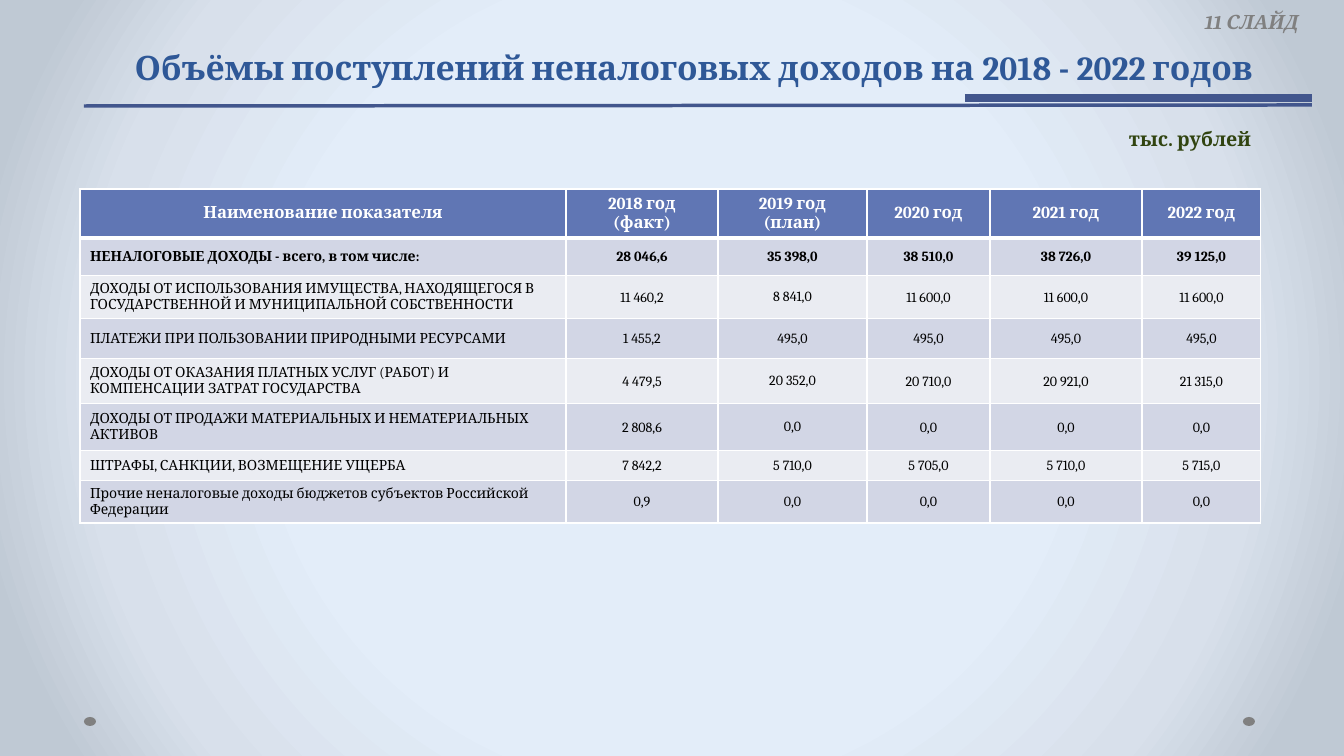
"""Build the slide on non-tax revenue volumes for 2018 - 2022."""
from dataclasses import dataclass

from pptx import Presentation, oxml, util as u
from pptx.dml.color import RGBColor
from pptx.enum import shapes, text
from pptx.oxml import ns

EMU_PER_PX = 914400 / 100.8
FONT = "Cambria"
COLOURS = {
    "title": "2F5897", "unit": "314410", "grey": "808080", "rule": "42568D",
    "header": "6076B4", "odd": "D2D6E5", "even": "EAECF2",
    "white": "FFFFFF", "black": "000000",
}
BACKGROUND_STOPS = {50: "E3EDF9", 76: "D8E0EB", 92: "BFC9D4"}
ALIGN = text.PP_ALIGN
ANCHOR = text.MSO_ANCHOR

TABLE_LEFT, TABLE_TOP = 80, 189
COLUMN_WIDTHS = [486, 152, 149, 123, 152, 119]
ROW_HEIGHTS = [48, 38, 43, 40, 45, 47, 30, 42]
PLAN_COLUMN = 2
ROWS = [
    ["Наименование показателя", "2018 год\v(факт)", "2019 год\v(план)",
     "2020 год", "2021 год", "2022 год"],
    ["НЕНАЛОГОВЫЕ ДОХОДЫ - всего, в том числе:",
     "28 046,6", "35 398,0", "38 510,0", "38 726,0", "39 125,0"],
    ["ДОХОДЫ ОТ ИСПОЛЬЗОВАНИЯ ИМУЩЕСТВА, НАХОДЯЩЕГОСЯ В "
     "ГОСУДАРСТВЕННОЙ И МУНИЦИПАЛЬНОЙ СОБСТВЕННОСТИ",
     "11 460,2", "8 841,0", "11 600,0", "11 600,0", "11 600,0"],
    ["ПЛАТЕЖИ ПРИ ПОЛЬЗОВАНИИ ПРИРОДНЫМИ РЕСУРСАМИ",
     "1 455,2", "495,0", "495,0", "495,0", "495,0"],
    ["ДОХОДЫ ОТ ОКАЗАНИЯ ПЛАТНЫХ УСЛУГ (РАБОТ) И КОМПЕНСАЦИИ ЗАТРАТ ГОСУДАРСТВА",
     "4 479,5", "20 352,0", "20 710,0", "20 921,0", "21 315,0"],
    ["ДОХОДЫ ОТ ПРОДАЖИ МАТЕРИАЛЬНЫХ И НЕМАТЕРИАЛЬНЫХ АКТИВОВ",
     "2 808,6", "0,0", "0,0", "0,0", "0,0"],
    ["ШТРАФЫ, САНКЦИИ, ВОЗМЕЩЕНИЕ УЩЕРБА",
     "7 842,2", "5 710,0", "5 705,0", "5 710,0", "5 715,0"],
    ["Прочие неналоговые доходы бюджетов субъектов Российской Федерации",
     "0,9", "0,0", "0,0", "0,0", "0,0"],
]


@dataclass
class Label:
    words: str
    left: int
    top: int
    width: int
    height: int
    size: int
    colour: str
    align: ALIGN
    anchor: ANCHOR = ANCHOR.TOP
    italic: bool = False


@dataclass
class Rule:
    start: tuple[int, int]
    end: tuple[int, int]
    weight: float


@dataclass
class Dot:
    left: int
    top: int = 717
    width: int = 12
    height: int = 9


LABELS = [
    Label("Объёмы поступлений неналоговых доходов на 2018 - 2022 годов",
          84, 30, 1220, 62, 24, "title", ALIGN.CENTER, ANCHOR.BOTTOM),
    Label("тыс. рублей", 1089, 122, 172, 34, 14, "unit", ALIGN.RIGHT),
    Label("11 СЛАЙД", 1195, 5, 123, 34, 14, "grey", ALIGN.LEFT, italic=True),
]
RULES = [Rule((84, 106), (1312, 105), 2.5), Rule((965, 98), (1312, 98), 6)]
DOTS = [Dot(1243), Dot(84)]


def px(length: int) -> u.Emu:
    return u.Emu(round(length * EMU_PER_PX))


def rgb(name: str) -> RGBColor:
    return RGBColor.from_string(COLOURS[name])


def style(para, size: int, colour: str, bold: bool, align: ALIGN) -> None:
    para.alignment = align
    para.font.name = FONT
    para.font.size = u.Pt(size)
    para.font.bold = bold
    para.font.color.rgb = rgb(colour)


def paint_background(page) -> None:
    stops = "".join(
        f'<a:gs pos="{share * 1000}"><a:srgbClr val="{colour}"/></a:gs>'
        for share, colour in BACKGROUND_STOPS.items())
    page._element.cSld.insert(0, oxml.parse_xml(
        f'<p:bg {ns.nsdecls("p", "a")}><p:bgPr><a:gradFill rotWithShape="1">'
        f'<a:gsLst>{stops}</a:gsLst><a:path path="circle">'
        '<a:fillToRect l="50000" t="50000" r="50000" b="50000"/></a:path>'
        '</a:gradFill><a:effectLst/></p:bgPr></p:bg>'))


def draw_dot(page, dot: Dot) -> None:
    oval = page.shapes.add_shape(
        shapes.MSO_SHAPE.OVAL, px(dot.left), px(dot.top), px(dot.width), px(dot.height))
    oval.shadow.inherit = False
    oval.fill.solid()
    oval.fill.fore_color.rgb = rgb("grey")
    oval.line.fill.background()


def draw_label(page, label: Label) -> None:
    box = page.shapes.add_textbox(
        px(label.left), px(label.top), px(label.width), px(label.height))
    frame = box.text_frame
    frame.word_wrap = True
    frame.vertical_anchor = label.anchor
    frame.text = label.words
    para = frame.paragraphs[0]
    style(para, label.size, label.colour, True, label.align)
    para.font.italic = label.italic


def draw_rule(page, rule: Rule) -> None:
    line = page.shapes.add_connector(
        shapes.MSO_CONNECTOR.STRAIGHT, *map(px, rule.start + rule.end))
    line.line.color.rgb = rgb("rule")
    line.line.width = u.Pt(rule.weight)
    line._element.spPr.append(oxml.parse_xml(f'<a:effectLst {ns.nsdecls("a")}/>'))


def add_borders(cell, row: int) -> None:
    weights = {"L": 1, "R": 1, "T": 3 if row == 1 else 1, "B": 3 if row == 0 else 1}
    for place, (side, weight) in enumerate(weights.items()):
        cell._tc.get_or_add_tcPr().insert(place, oxml.parse_xml(
            f'<a:ln{side} {ns.nsdecls("a")} w="{u.Pt(weight)}"><a:solidFill>'
            f'<a:srgbClr val="{COLOURS["white"]}"/></a:solidFill></a:ln{side}>'))


def fill_cell(cell, words: str, row: int, column: int) -> None:
    header = row == 0
    cell.text = words
    cell.vertical_anchor = ANCHOR.MIDDLE
    if not header and column not in (0, PLAN_COLUMN):
        cell.margin_left = cell.margin_top = cell.margin_right = px(1)
        cell.margin_bottom = 0
    cell.fill.solid()
    cell.fill.fore_color.rgb = rgb("header" if header else "odd" if row % 2 else "even")
    add_borders(cell, row)
    for para in cell.text_frame.paragraphs:
        style(para, 12 if header else 10, "white" if header else "black", row < 2,
              ALIGN.CENTER if header or column else ALIGN.LEFT)


def draw_table(page) -> None:
    table = page.shapes.add_table(
        len(ROWS), len(COLUMN_WIDTHS), px(TABLE_LEFT), px(TABLE_TOP),
        px(sum(COLUMN_WIDTHS)), px(sum(ROW_HEIGHTS))).table
    for column, width in zip(table.columns, COLUMN_WIDTHS):
        column.width = px(width)
    for row, (height, values) in enumerate(zip(ROW_HEIGHTS, ROWS)):
        table.rows[row].height = px(height)
        for column, words in enumerate(values):
            fill_cell(table.cell(row, column), words, row, column)


def main() -> None:
    deck = Presentation()
    deck.slide_width, deck.slide_height = px(1344), px(756)
    page = deck.slides.add_slide(deck.slide_layouts[6])
    paint_background(page)
    for dot in DOTS:
        draw_dot(page, dot)
    draw_table(page)
    for label in LABELS:
        draw_label(page, label)
    for rule in RULES:
        draw_rule(page, rule)
    deck.save("out.pptx")


if __name__ == "__main__":
    main()
